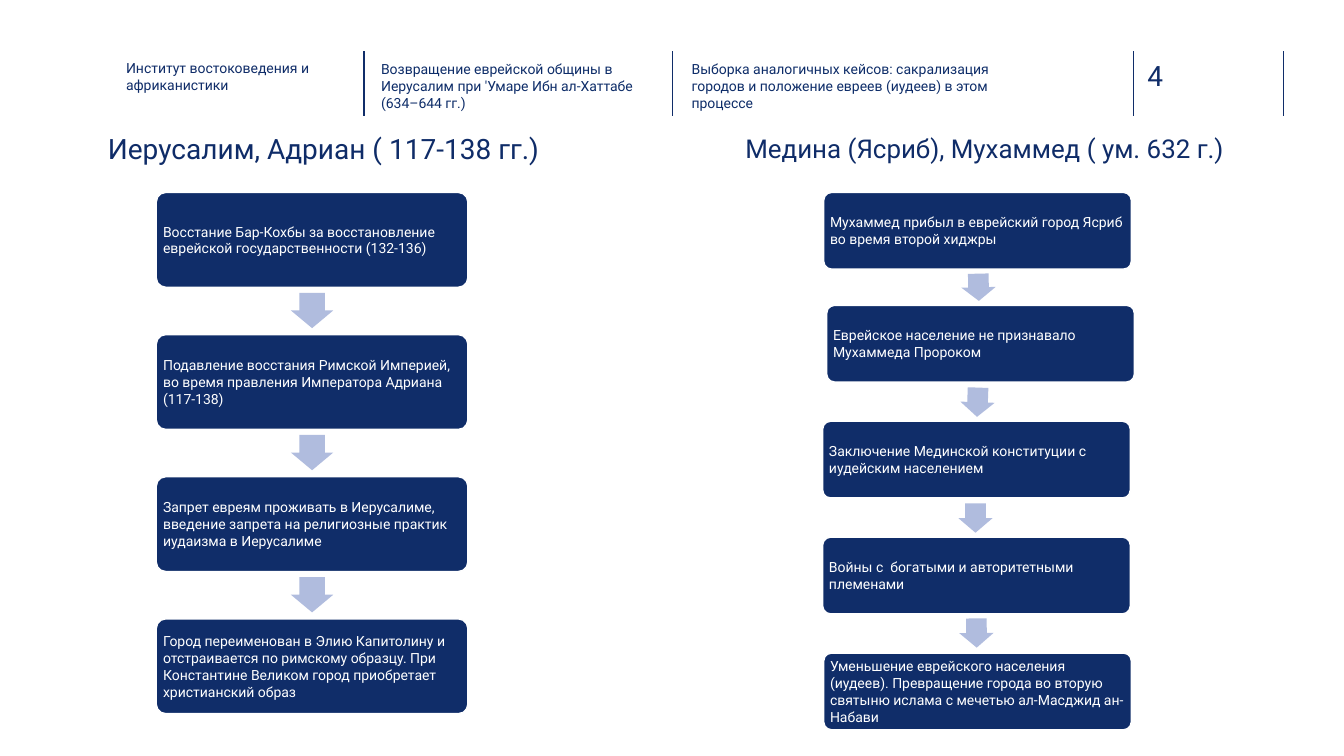
from pptx import Presentation
from pptx.dml.color import RGBColor
from pptx.enum.shapes import MSO_CONNECTOR as Connector, MSO_SHAPE as Shape
from pptx.enum.text import MSO_ANCHOR as Anchor, PP_ALIGN as Align
from pptx.oxml.ns import qn
from pptx.util import Inches, Pt
from lxml.etree import SubElement


def color(hex_code):
    return RGBColor.from_string(hex_code)


class FlowSlide:
    FONT = "Roboto"
    NAVY = "102D69"
    INK = "0F2C68"
    PALE = "B0BCDE"
    WHITE = "FFFFFF"

    def __init__(self, slide):
        self.shapes = slide.shapes

    def set_words(self, shape, words, size, ink, inset=0, align=Align.LEFT, anchor=Anchor.TOP):
        frame = shape.text_frame
        frame.word_wrap = True
        frame.vertical_anchor = anchor
        frame.margin_left = frame.margin_right = Inches(inset)
        frame.margin_top = frame.margin_bottom = Inches(inset)
        frame.text = words
        for paragraph in frame.paragraphs:
            paragraph.alignment = align
            for run in paragraph.runs:
                run.font.name = self.FONT
                run.font.size = Pt(size)
                run.font.color.rgb = color(ink)

    def label(self, box, words, size, ink=INK, align=Align.LEFT):
        text = self.shapes.add_textbox(*map(Inches, box))
        self.set_words(text, words, size, ink, align=align)

    def divider(self, x, top=0.51, bottom=1.15):
        rule = self.shapes.add_connector(
            Connector.STRAIGHT, Inches(x), Inches(top), Inches(x), Inches(bottom))
        rule.line.color.rgb = color(self.NAVY)
        rule.line.width = Pt(1)
        SubElement(rule._element.spPr, qn("a:effectLst"))

    def step(self, box, words):
        card = self.shapes.add_shape(Shape.ROUNDED_RECTANGLE, *map(Inches, box))
        card.shadow.inherit = False
        card.adjustments[0] = 0.1
        card.fill.solid()
        card.fill.fore_color.rgb = color(self.NAVY)
        card.line.color.rgb = color(self.WHITE)
        card.line.width = Pt(1)
        self.set_words(card, words, 10, self.WHITE, inset=0.04, anchor=Anchor.MIDDLE)

    def arrow(self, box, angle=90):
        pointer = self.shapes.add_shape(Shape.RIGHT_ARROW, *map(Inches, box))
        pointer.shadow.inherit = False
        pointer.adjustments[0] = 0.6
        pointer.adjustments[1] = 0.5
        pointer.rotation = angle
        pointer.fill.solid()
        pointer.fill.fore_color.rgb = color(self.PALE)
        pointer.line.fill.background()


JERUSALEM_STEPS = [
    "Восстание Бар-Кохбы за восстановление еврейской государственности (132-136)",
    "Подавление восстания Римской Империей, во время правления Императора Адриана (117-138)",
    "Запрет евреям проживать в Иерусалиме, введение запрета на религиозные практик "
    "иудаизма в Иерусалиме",
    "Город переименован в Элию Капитолину и отстраивается по римскому образцу. "
    "При Константине Великом город приобретает христианский образ",
]
# Left, top and wording of each step
MEDINA_STEPS = [
    (8.17, 1.91, "Мухаммед прибыл в еврейский город Ясриб во время второй хиджры"),
    (8.2, 3.03, "Еврейское население не признавало Мухаммеда Пророком"),
    (8.16, 4.18, "Заключение Мединской конституции с иудейским населением"),
    (8.16, 5.33, "Войны с  богатыми и авторитетными племенами"),
    (8.17, 6.48, "Уменьшение еврейского населения (иудеев). Превращение города во вторую "
                 "святыню ислама с мечетью ал-Масджид ан-Набави"),
]
# Left, top, length and angle of each arrow
MEDINA_ARROWS = [
    (9.57, 2.68, 0.27, 88.6),
    (9.55, 3.82, 0.29, 92),
    (9.53, 4.97, 0.29, 90),
    (9.54, 6.11, 0.29, 89.3),
]


def main():
    deck = Presentation()
    deck.slide_width, deck.slide_height = Inches(13.33), Inches(7.5)
    page = FlowSlide(deck.slides.add_slide(deck.slide_layouts[6]))

    # Header strip
    for x in (3.61, 6.67, 11.24, 12.73):
        page.divider(x)
    page.label((11.38, 0.58, 0.73, 0.34), "4", 20, page.NAVY)
    page.label((1.25, 0.59, 2.08, 0.45), "Институт востоковедения и африканистики", 10)
    page.label((3.78, 0.6, 2.76, 0.45),
               "Возвращение еврейской общины в Иерусалим при 'Умаре Ибн ал-Хаттабе "
               "(634–644 гг.)", 10, "0E2D69")
    page.label((6.86, 0.6, 3.13, 0.45),
               "Выборка аналогичных кейсов: сакрализация городов и положение евреев "
               "(иудеев) в этом процессе", 10, "0E2D69")

    # Column titles
    page.label((0.33, 1.3, 5.83, 0.47), "Иерусалим, Адриан ( 117-138 гг.) ", 20,
               align=Align.CENTER)
    page.label((6.85, 1.32, 5.89, 0.59), "Медина (Ясриб), Мухаммед ( ум. 632 г.) ", 18.5,
               align=Align.CENTER)

    # Jerusalem flow
    pitch = 1.41
    for i, words in enumerate(JERUSALEM_STEPS):
        if i:
            page.arrow((2.92, 2.87 + pitch * (i - 1), 0.35, 0.42))
        page.step((1.55, 1.91 + pitch * i, 3.09, 0.94), words)

    # Medina flow
    for left, top, words in MEDINA_STEPS:
        page.step((left, top, 3.05, 0.76), words)
    for left, top, length, angle in MEDINA_ARROWS:
        page.arrow((left, top, length, 0.34), angle)

    deck.save("out.pptx")


if __name__ == "__main__":
    main()
